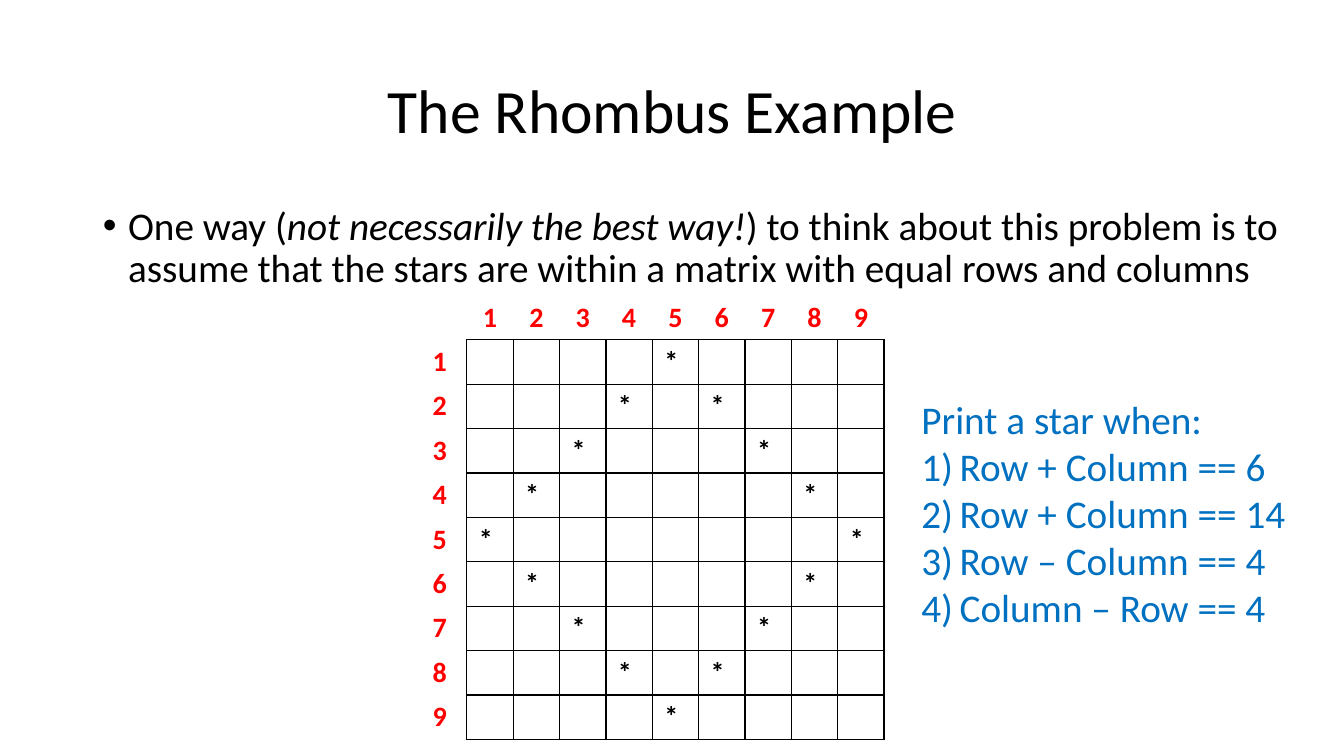
import pptx
import pptx.util
import pptx.dml.color
import pptx.enum.text
import pptx.oxml
import pptx.oxml.ns

PX = 9144
COLORS = {"ink": "000000", "label": "FF0000", "rule": "0070C0"}
ALIGN = pptx.enum.text.PP_ALIGN
SIZE = 9
CELL_W, CELL_H = 46, 44


def px(*lengths):
    return [pptx.util.Emu(n * PX) for n in lengths]


def add_run(p, text, color, **formats):
    r = p.add_run()
    r.text = text
    for name, value in {"name": "Calibri", **formats}.items():
        setattr(r.font, name, value)
    r.font.color.rgb = pptx.dml.color.RGBColor.from_string(COLORS[color])


def add_element(parent, xml):
    tag, rest = xml.split(" ", 1)
    ns = pptx.oxml.ns.nsdecls("a")
    parent.append(pptx.oxml.parse_xml(f"<a:{tag} {ns} {rest}"))


def set_list(p, indent, bullet):
    pPr = p._p.get_or_add_pPr()
    pPr.set("marL", str(indent * PX))
    pPr.set("indent", str(-indent * PX))
    add_element(pPr, bullet)


def place(sp, left, top, width, height):
    sp.left, sp.top, sp.width, sp.height = px(left, top, width, height)
    sp.text_frame.auto_size = pptx.enum.text.MSO_AUTO_SIZE.NONE
    p = sp.text_frame.paragraphs[0]
    p.line_spacing = 0.9
    return p


def fill_title(sp):
    p = place(sp, 92, 40, 1150, 145)
    p.alignment = ALIGN.CENTER
    sp.text_frame.vertical_anchor = pptx.enum.text.MSO_ANCHOR.MIDDLE
    add_run(p, "The Rhombus Example", "ink", size=pptx.util.Pt(44))


def fill_body(sp):
    p = place(sp, 92, 200, 1197, 527)
    p.space_before = pptx.util.Pt(10)
    set_list(p, 25, 'buChar char="•"/>')
    parts = [
        ("One way (", False),
        ("not necessarily the best way!", True),
        (") to think about this problem is to assume that the stars "
         "are within a matrix with equal rows and columns", False),
    ]
    for text, italic in parts:
        add_run(p, text, "ink", size=pptx.util.Pt(28), italic=italic)


def has_star(row, col):
    return row + col in (6, 14) or abs(row - col) == 4


def format_cell(cell, text, color, align, sides):
    margins = dict(zip(("margin_left", "margin_top", "margin_right", "margin_bottom"),
                       px(12, 5, 12, 5)))
    for name, value in margins.items():
        setattr(cell, name, value)
    p = cell.text_frame.paragraphs[0]
    p.alignment = align
    if text:
        add_run(p, text, color, size=pptx.util.Pt(20), bold=True)
    tcPr = cell._tc.get_or_add_tcPr()
    for side in "LRTB":
        if side in sides:
            line = f'<a:solidFill><a:srgbClr val="{COLORS["ink"]}"/></a:solidFill>'
        else:
            line = "<a:noFill/>"
        add_element(tcPr, f'ln{side} w="12700">{line}</a:ln{side}>')
    cell.fill.background()


def add_matrix(slide):
    n = SIZE + 1
    table = slide.shapes.add_table(n, n, *px(417, 293, n * CELL_W, n * CELL_H)).table
    for name in ("first_row", "horz_banding"):
        setattr(table, name, False)
    for row in range(n):
        for col in range(n):
            cell = table.cell(row, col)
            if row and col:
                star = "*" if has_star(row, col) else ""
                format_cell(cell, star, "ink", ALIGN.LEFT, "LRTB")
            elif row:
                format_cell(cell, str(row), "label", ALIGN.LEFT, "R")
            elif col:
                format_cell(cell, str(col), "label", ALIGN.CENTER, "B")
            else:
                format_cell(cell, "", "label", ALIGN.LEFT, "")


def add_rules(slide, heading, rules):
    tf = slide.shapes.add_textbox(*px(904, 387, 385, 246)).text_frame
    tf.word_wrap = False
    tf.auto_size = pptx.enum.text.MSO_AUTO_SIZE.SHAPE_TO_FIT_TEXT
    size = pptx.util.Pt(28)
    add_run(tf.paragraphs[0], heading, "rule", size=size)
    for rule in rules:
        p = tf.add_paragraph()
        set_list(p, 38, 'buAutoNum type="arabicParenR"/>')
        add_run(p, rule, "rule", size=size)


def main():
    prs = pptx.Presentation()
    prs.slide_width, prs.slide_height = px(1333, 750)
    slide = prs.slides.add_slide(prs.slide_layouts[1])
    title, body = slide.placeholders
    fill_title(title)
    fill_body(body)
    add_matrix(slide)
    add_rules(slide, "Print a star when:", [
        "Row + Column == 6",
        "Row + Column == 14",
        "Row – Column == 4",
        "Column – Row == 4",
    ])
    prs.save("out.pptx")


if __name__ == "__main__":
    main()
